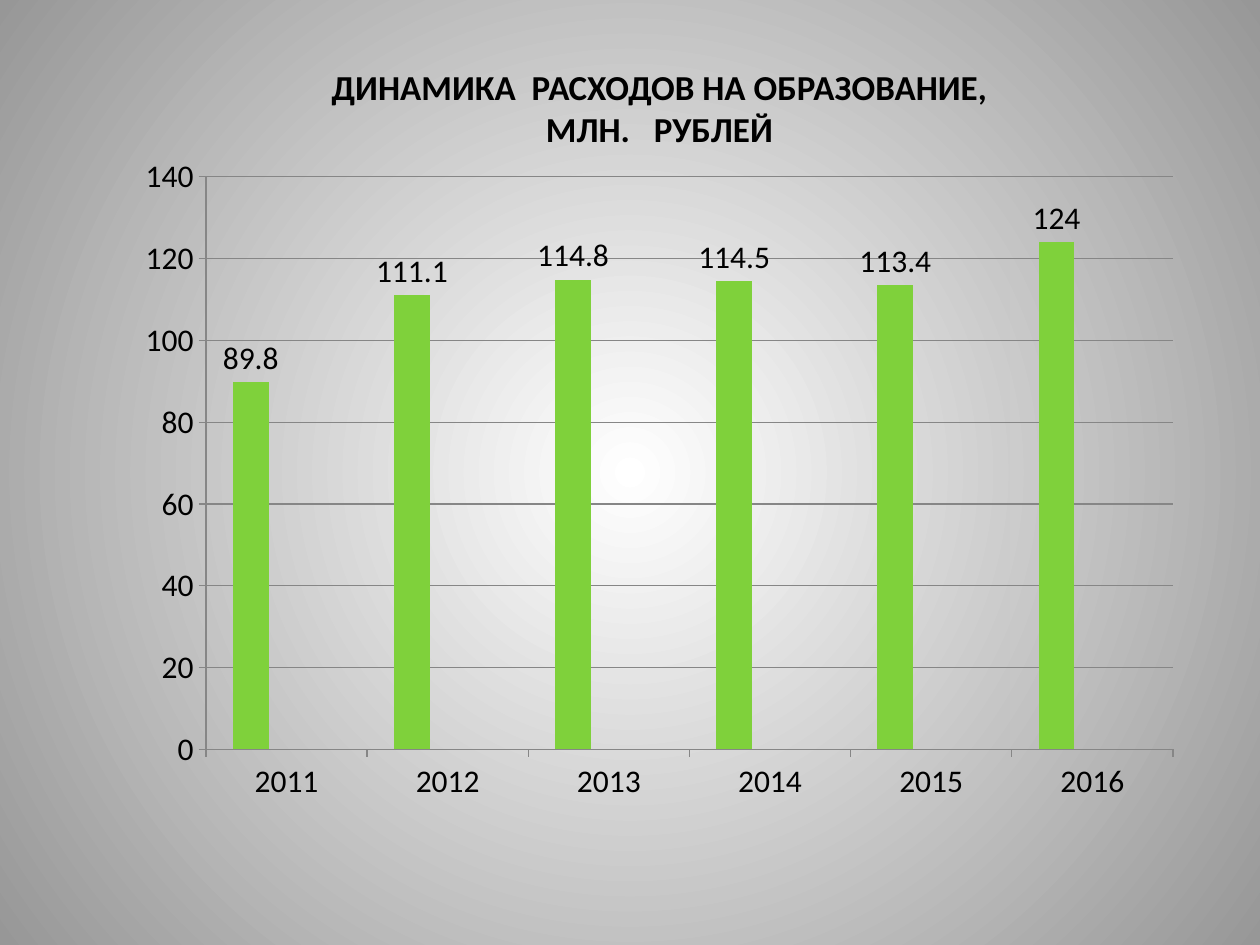
import dataclasses

import lxml.etree
import pptx
import pptx.chart.data
import pptx.dml.color
import pptx.enum.chart
import pptx.enum.text
import pptx.oxml
import pptx.oxml.ns
import pptx.util

RGBColor = pptx.dml.color.RGBColor
BLACK = RGBColor(0x00, 0x00, 0x00)
WHITE = RGBColor(0xFF, 0xFF, 0xFF)
EDGE_GRAY = RGBColor(0x97, 0x97, 0x97)
AXIS_GRAY = RGBColor(0x86, 0x86, 0x86)
GREEN = RGBColor(0x7F, 0xD1, 0x3B)
PINK = RGBColor(0xEA, 0x15, 0x7A)
AMBER = RGBColor(0xFE, 0xB8, 0x0A)

FONT = "Calibri"
PX_PER_INCH = 126
TITLE_LINES = (" ДИНАМИКА  РАСХОДОВ НА ОБРАЗОВАНИЕ, ", "МЛН.   РУБЛЕЙ")
YEARS = [str(year) for year in range(2011, 2017)]


@dataclasses.dataclass(frozen=True)
class Area:
    left: int
    top: int
    width: int
    height: int

    def emu(self) -> tuple:
        return tuple(px(length) for length in dataclasses.astuple(self))


@dataclasses.dataclass(frozen=True)
class Spending:
    name: str
    values: tuple
    color: RGBColor


EMPTY = (None,) * len(YEARS)
SPENDING = (
    Spending("Series 1", (89.8, 111.1, 114.8, 114.5, 113.4, 124), GREEN),
    Spending("Series 2", EMPTY, PINK),
    Spending("Series 3", EMPTY, AMBER),
)
CHART_AREA = Area(59, 137, 1131, 709)
TITLE_AREA = Area(197, 59, 925, 97)
PLOT_LAYOUT = {"x": 0.13, "y": 0.056, "w": 0.855, "h": 0.808}


def px(length: int) -> int:
    return round(length * pptx.util.Inches(1) / PX_PER_INCH)


def paint_background(page) -> None:
    fill = page.background.fill
    fill.gradient()
    for stop, color in zip(fill.gradient_stops, (WHITE, EDGE_GRAY)):
        stop.color.rgb = color
    # Turn the linear gradient into a circle around the middle
    linear = page._element.find(".//" + pptx.oxml.ns.qn("a:lin"))
    circle = pptx.oxml.parse_xml(
        f'<a:path {pptx.oxml.ns.nsdecls("a")} path="circle">'
        '<a:fillToRect l="50000" t="50000" r="50000" b="50000"/></a:path>'
    )
    linear.getparent().replace(linear, circle)


def place_plot(chart) -> None:
    qn = pptx.oxml.ns.qn
    plot_area = chart._chartSpace.find(".//" + qn("c:plotArea"))
    layout = plot_area.find(qn("c:layout"))
    if layout is None:
        layout = lxml.etree.Element(qn("c:layout"))
        plot_area.insert(0, layout)
    manual = lxml.etree.SubElement(layout, qn("c:manualLayout"))
    settings = {"layoutTarget": "inner", "xMode": "edge", "yMode": "edge", **PLOT_LAYOUT}
    for name, value in settings.items():
        lxml.etree.SubElement(manual, qn(f"c:{name}")).set("val", str(value))


def style_line(line) -> None:
    line.color.rgb = AXIS_GRAY
    line.width = pptx.util.Pt(0.75)


def add_spending_chart(page) -> None:
    chart_data = pptx.chart.data.CategoryChartData()
    chart_data.categories = YEARS
    for spending in SPENDING:
        chart_data.add_series(spending.name, spending.values)
    chart = page.shapes.add_chart(
        pptx.enum.chart.XL_CHART_TYPE.COLUMN_CLUSTERED, *CHART_AREA.emu(), chart_data
    ).chart
    chart.has_title = False
    chart.has_legend = False
    chart.font.name = FONT
    chart.font.size = pptx.util.Pt(18)
    chart.font.color.rgb = BLACK
    place_plot(chart)

    # Columns and value labels
    plot = chart.plots[0]
    plot.vary_by_categories = False
    plot.gap_width = 150
    plot.overlap = 0
    for series, spending in zip(plot.series, SPENDING):
        series.invert_if_negative = False
        series.format.fill.solid()
        series.format.fill.fore_color.rgb = spending.color
    labels = plot.series[0].data_labels
    labels.show_value = True
    labels.position = pptx.enum.chart.XL_LABEL_POSITION.OUTSIDE_END

    # Axes
    for axis in (chart.category_axis, chart.value_axis):
        axis.major_tick_mark = pptx.enum.chart.XL_TICK_MARK.OUTSIDE
        axis.minor_tick_mark = pptx.enum.chart.XL_TICK_MARK.NONE
        style_line(axis.format.line)
    values = chart.value_axis
    values.minimum_scale, values.maximum_scale, values.major_unit = 0, 140, 20
    values.has_major_gridlines = True
    style_line(values.major_gridlines.format.line)


def add_title(page) -> None:
    box = page.shapes.add_textbox(*TITLE_AREA.emu())
    frame = box.text_frame
    frame.word_wrap = True
    frame.auto_size = pptx.enum.text.MSO_AUTO_SIZE.SHAPE_TO_FIT_TEXT
    frame.text = "\n".join(TITLE_LINES)
    for para in frame.paragraphs:
        para.alignment = pptx.enum.text.PP_ALIGN.CENTER
        para.font.name = FONT
        para.font.size = pptx.util.Pt(20)
        para.font.bold = True
        para.font.color.rgb = BLACK


def main() -> None:
    deck = pptx.Presentation()
    deck.slide_width = pptx.util.Inches(10)
    deck.slide_height = pptx.util.Inches(7.5)
    page = deck.slides.add_slide(deck.slide_layouts[6])
    paint_background(page)
    add_spending_chart(page)
    add_title(page)
    deck.save("out.pptx")


if __name__ == "__main__":
    main()
